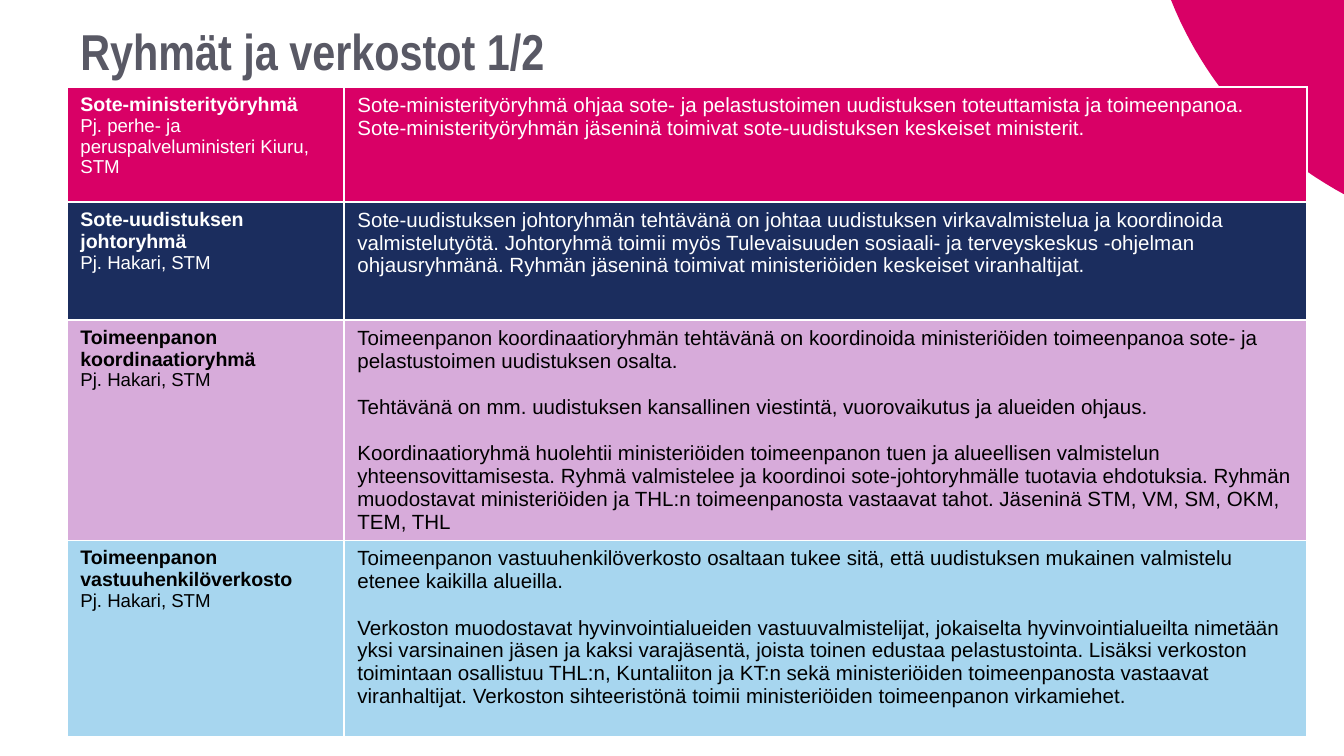
from dataclasses import dataclass
from math import acos, asin, cos, sin

from lxml.etree import SubElement
from pptx import Presentation
from pptx.dml.color import RGBColor
from pptx.enum.text import MSO_ANCHOR, PP_ALIGN
from pptx.oxml.ns import qn
from pptx.util import Emu, Pt

WIDTH, HEIGHT = 1344, 756
PX = 914400 * 10 / WIDTH
MAGENTA, NAVY, LILAC, SKY = "D90066", "1B2D5E", "D7ABDA", "A7D6EF"
WHITE, BLACK, GREY = "FFFFFF", "000000", "595965"


@dataclass
class Group:
    name: str
    chair: str
    tasks: list[str]
    fill: str
    color: str
    height: int


GROUPS = [
    Group("Sote-ministerityöryhmä", "Pj. perhe- ja peruspalveluministeri Kiuru, STM", [
        "Sote-ministerityöryhmä ohjaa sote- ja pelastustoimen uudistuksen toteuttamista ja "
        "toimeenpanoa. Sote-ministerityöryhmän jäseninä toimivat sote-uudistuksen keskeiset "
        "ministerit.",
    ], MAGENTA, WHITE, 115),
    Group("Sote-uudistuksen johtoryhmä", "Pj. Hakari, STM", [
        "Sote-uudistuksen johtoryhmän tehtävänä on johtaa uudistuksen virkavalmistelua ja "
        "koordinoida valmistelutyötä. Johtoryhmä toimii myös Tulevaisuuden sosiaali- ja "
        "terveyskeskus -ohjelman ohjausryhmänä. Ryhmän jäseninä toimivat ministeriöiden "
        "keskeiset viranhaltijat.",
    ], NAVY, WHITE, 118),
    Group("Toimeenpanon koordinaatioryhmä", "Pj. Hakari, STM", [
        "Toimeenpanon koordinaatioryhmän tehtävänä on koordinoida ministeriöiden toimeenpanoa "
        "sote- ja pelastustoimen uudistuksen osalta.",
        "Tehtävänä on mm. uudistuksen kansallinen viestintä, vuorovaikutus ja alueiden ohjaus.",
        "Koordinaatioryhmä huolehtii ministeriöiden toimeenpanon tuen ja alueellisen valmistelun "
        "yhteensovittamisesta. Ryhmä valmistelee ja koordinoi sote-johtoryhmälle tuotavia "
        "ehdotuksia. Ryhmän muodostavat ministeriöiden ja THL:n toimeenpanosta vastaavat tahot. "
        "Jäseninä STM, VM, SM, OKM, TEM, THL",
    ], LILAC, BLACK, 219),
    Group("Toimeenpanon vastuuhenkilöverkosto", "Pj. Hakari, STM", [
        "Toimeenpanon vastuuhenkilöverkosto osaltaan tukee sitä, että uudistuksen mukainen "
        "valmistelu etenee kaikilla alueilla.",
        "Verkoston muodostavat hyvinvointialueiden vastuuvalmistelijat, jokaiselta "
        "hyvinvointialueilta nimetään yksi varsinainen jäsen ja kaksi varajäsentä, joista toinen "
        "edustaa pelastustointa. Lisäksi verkoston toimintaan osallistuu THL:n, Kuntaliiton ja "
        "KT:n sekä ministeriöiden toimeenpanosta vastaavat viranhaltijat. Verkoston "
        "sihteeristönä toimii ministeriöiden toimeenpanon virkamiehet.",
    ], SKY, BLACK, 196),
]


def px(n: float) -> Emu:
    return Emu(round(n * PX))


def rgb(color: str) -> RGBColor:
    return RGBColor.from_string(color)


def add_run(p, text: str, size: float, color: str, bold: bool = False,
            font: str = "Arial") -> None:
    r = p.add_run()
    r.text = text
    r.font.name, r.font.size, r.font.bold = font, Pt(size), bold
    r.font.color.rgb = rgb(color)


def add_corner(slide) -> None:
    """Top right corner, cut off by a large circle."""
    cx, cy, radius, steps = 1525, -141, 381, 24
    start, end = asin(-cy / radius), acos((cx - WIDTH) / radius)
    angles = [start + (end - start) * i / steps for i in range(steps + 1)]
    arc = [(px(cx - radius * cos(a)), px(cy + radius * sin(a))) for a in angles]
    builder = slide.shapes.build_freeform(px(WIDTH), 0)
    builder.add_line_segments(arc, close=True)
    sp = builder.convert_to_shape()
    sp.shadow.inherit = False
    sp.fill.solid()
    sp.fill.fore_color.rgb = rgb(MAGENTA)
    sp.line.fill.background()


def add_title(slide, text: str) -> None:
    sp = slide.shapes.title
    sp.left, sp.top, sp.width, sp.height = px(67), px(19), px(1000), px(68)
    tf = sp.text_frame
    tf.word_wrap = True
    tf.vertical_anchor = MSO_ANCHOR.BOTTOM
    p = tf.paragraphs[0]
    p.alignment = PP_ALIGN.LEFT
    add_run(p, text, 27, GREY, True, "Arial Narrow")


def format_cell(cell, fill: str) -> None:
    # Borders precede the fill in the cell properties
    props = cell._tc.get_or_add_tcPr()
    for side in ("lnL", "lnR", "lnT", "lnB"):
        line = SubElement(props, qn(f"a:{side}"), w=str(Pt(1)))
        SubElement(SubElement(line, qn("a:solidFill")), qn("a:srgbClr"), val=WHITE)
    cell.fill.solid()
    cell.fill.fore_color.rgb = rgb(fill)


def add_group_table(slide, groups: list[Group]) -> None:
    widths = (277, 963)
    height = sum(g.height for g in groups)
    table = slide.shapes.add_table(len(groups), len(widths), px(67), px(87),
                                   px(sum(widths)), px(height)).table
    table.first_row = table.horz_banding = False
    for column, width in zip(table.columns, widths):
        column.width = px(width)
    for i, group in enumerate(groups):
        table.rows[i].height = px(group.height)
        name_cell, task_cell = table.cell(i, 0), table.cell(i, 1)
        for cell in (name_cell, task_cell):
            format_cell(cell, group.fill)
        # Name and chair
        tf = name_cell.text_frame
        add_run(tf.paragraphs[0], group.name, 10.5, group.color, True)
        add_run(tf.add_paragraph(), group.chair, 10, group.color)
        # Tasks, one line apart
        tf = task_cell.text_frame
        for n, task in enumerate(group.tasks):
            p = tf.add_paragraph() if n else tf.paragraphs[0]
            if n:
                p.space_before = Pt(12.6)
            add_run(p, task, 11, group.color)


def main() -> None:
    prs = Presentation()
    prs.slide_width, prs.slide_height = px(WIDTH), px(HEIGHT)
    slide = prs.slides.add_slide(prs.slide_layouts[5])
    add_corner(slide)
    add_title(slide, "Ryhmät ja verkostot 1/2")
    add_group_table(slide, GROUPS)
    prs.save("out.pptx")


if __name__ == "__main__":
    main()
